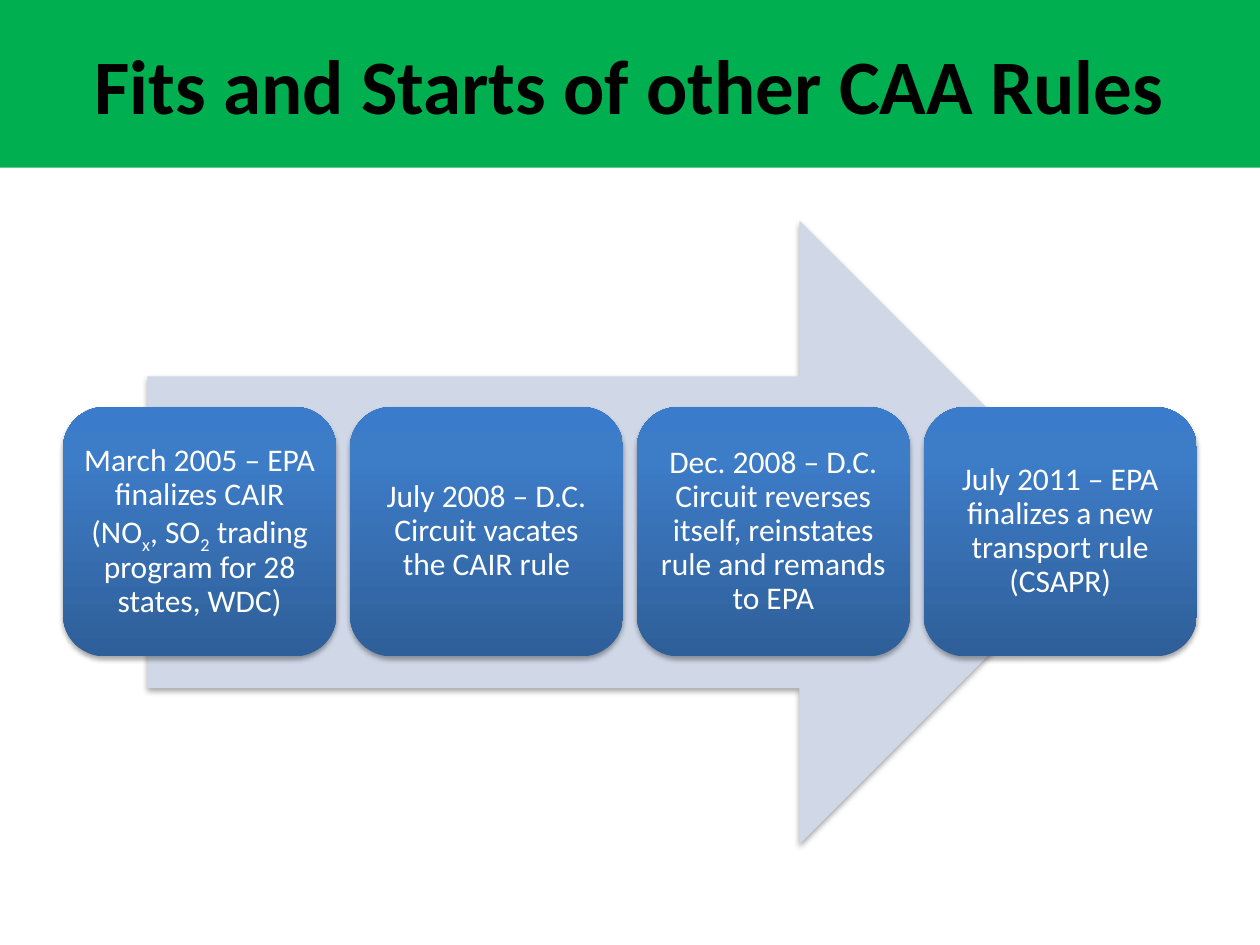
from pptx import Presentation, util as u
from pptx.dml.color import RGBColor
from pptx.enum import shapes, text
from pptx.oxml import parse_xml
from pptx.oxml.ns import nsdecls, qn

COLORS = {
    "banner": "00B050", "title": "000000", "arrow": "D0D8E8",
    "step_text": "FFFFFF", "shadow": "000000",
}
STEP_GRADIENT = [(0, "2F5F99"), (80, "3D7CC7"), (100, "3A7CCB")]
TITLE_FONT = {"name": "Calibri", "size": u.Pt(44), "bold": True}
STEP_FONT = {"name": "Calibri", "size": u.Pt(18)}
# The rounded corners already inset the text by about 0.1 inch
STEP_FRAME = {
    "word_wrap": True, "vertical_anchor": text.MSO_ANCHOR.MIDDLE,
    "margin_left": u.Inches(0.07), "margin_right": u.Inches(0.07),
    "margin_top": u.Inches(0.07), "margin_bottom": u.Inches(0.07),
}
STEP_PARA = {
    "alignment": text.PP_ALIGN.CENTER, "line_spacing": 0.9,
    "space_after": u.Pt(6.3),
}

# Each step is a list of (text, is_subscript) spans
STEPS = [
    [("March 2005 – EPA finalizes CAIR (NO", False), ("x", True),
     (", SO", False), ("2", True),
     (" trading program for 28 states, WDC)", False)],
    [("July 2008 – D.C. Circuit vacates the CAIR rule", False)],
    [("Dec. 2008 – D.C. Circuit reverses itself, reinstates rule "
      "and remands to EPA", False)],
    [("July 2011 – EPA finalizes a new transport rule (CSAPR)", False)],
]
STEP_LEFT, STEP_TOP, STEP_WIDTH, STEP_HEIGHT = 0.5, 3.23, 2.17, 1.98
STEP_RIGHT = 9.5


def set_values(target, values):
    for name, value in values.items():
        setattr(target, name, value)


def fill_solid(shape, color):
    shape.fill.solid()
    shape.fill.fore_color.rgb = RGBColor.from_string(COLORS[color])


def fill_gradient(shape, stops):
    shape.fill.gradient()
    shape.fill.gradient_angle = 90
    stop_list = next(shape._element.spPr.iter(qn("a:gsLst")))
    for old_stop in list(stop_list):
        stop_list.remove(old_stop)
    for position, color in stops:
        stop_list.append(parse_xml(
            f'<a:gs {nsdecls("a")} pos="{position * 1000}">'
            f'<a:srgbClr val="{color}"/></a:gs>'))


def add_shadow(shape):
    shape.shadow.inherit = False
    effects = shape._element.spPr.find(qn("a:effectLst"))
    effects.append(parse_xml(
        f'<a:outerShdw {nsdecls("a")} blurRad="{u.Pt(3.1)}" '
        f'dist="{u.Pt(1.8)}" dir="5400000" rotWithShape="0">'
        f'<a:srgbClr val="{COLORS["shadow"]}"><a:alpha val="35000"/>'
        '</a:srgbClr></a:outerShdw>'))


def add_span(para, words, font, color, subscript=False):
    span = para.add_run()
    span.text = words
    set_values(span.font, font)
    span.font.color.rgb = RGBColor.from_string(COLORS[color])
    if subscript:
        span._r.get_or_add_rPr().set("baseline", "-25000")


def add_block(page, kind, left, top, width, height):
    block = page.shapes.add_shape(
        kind, u.Inches(left), u.Inches(top), u.Inches(width), u.Inches(height))
    block.line.fill.background()
    add_shadow(block)
    return block


def format_title(page, words):
    title = page.shapes.title
    set_values(title, {"left": u.Inches(0), "top": u.Inches(0),
                       "width": u.Inches(10), "height": u.Inches(1.33)})
    fill_solid(title, "banner")
    title.text_frame.vertical_anchor = text.MSO_ANCHOR.MIDDLE
    para = title.text_frame.paragraphs[0]
    para.alignment = text.PP_ALIGN.CENTER
    add_span(para, words, TITLE_FONT, "title")


def add_step(page, left, spans):
    box = add_block(page, shapes.MSO_SHAPE.ROUNDED_RECTANGLE,
                    left, STEP_TOP, STEP_WIDTH, STEP_HEIGHT)
    fill_gradient(box, STEP_GRADIENT)
    set_values(box.text_frame, STEP_FRAME)
    para = box.text_frame.paragraphs[0]
    set_values(para, STEP_PARA)
    for words, subscript in spans:
        add_span(para, words, STEP_FONT, "step_text", subscript)


def main():
    deck = Presentation()
    deck.slide_width, deck.slide_height = u.Inches(10), u.Inches(7.5)
    page = deck.slides.add_slide(deck.slide_layouts[5])

    # Title banner
    format_title(page, "Fits and Starts of other CAA Rules")

    # Arrow behind the steps
    arrow = add_block(page, shapes.MSO_SHAPE.RIGHT_ARROW, 1.17, 1.75, 7.65, 4.95)
    fill_solid(arrow, "arrow")

    # Steps, spread evenly from left to right
    pitch = (STEP_RIGHT - STEP_WIDTH - STEP_LEFT) / (len(STEPS) - 1)
    for index, spans in enumerate(STEPS):
        add_step(page, STEP_LEFT + index * pitch, spans)

    deck.save("out.pptx")


if __name__ == "__main__":
    main()
